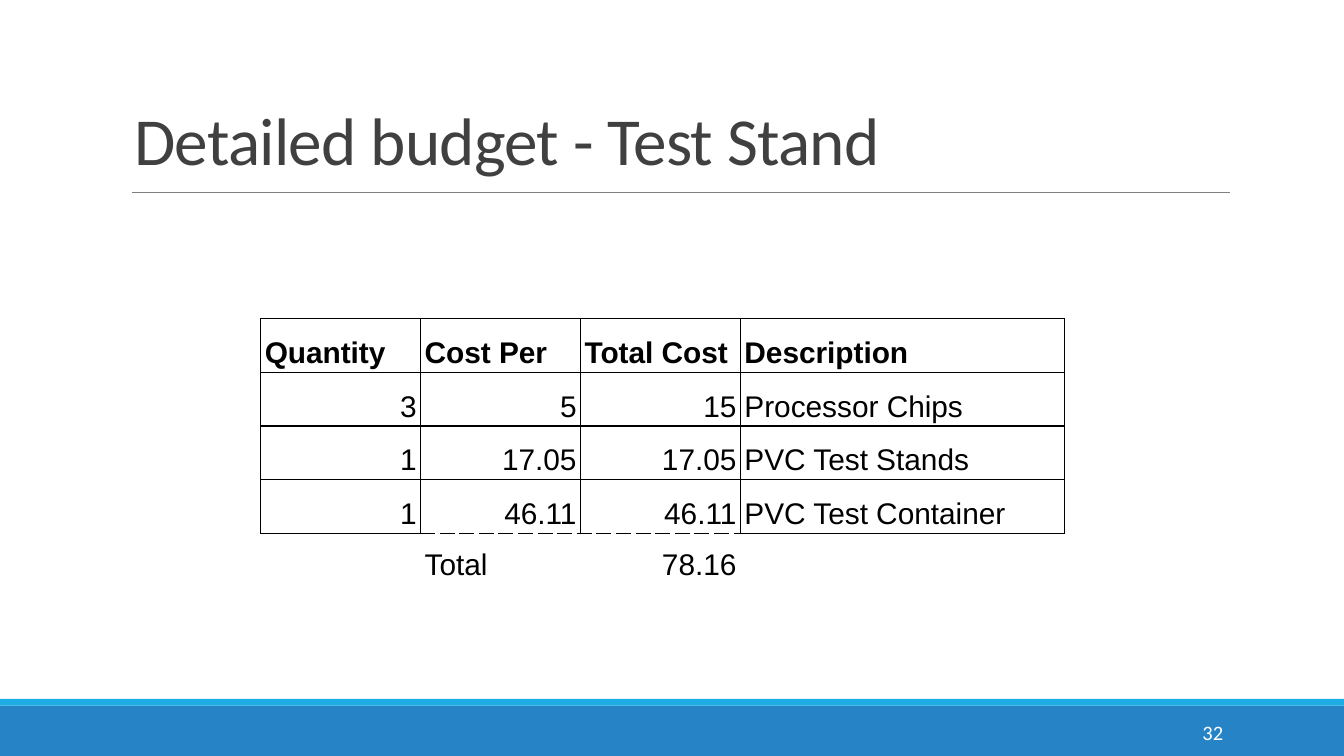
from dataclasses import dataclass

from lxml import etree
from pptx import Presentation
from pptx.dml.color import RGBColor
from pptx.enum import shapes, text
from pptx.oxml import ns
from pptx.util import Inches, Pt


@dataclass(frozen=True)
class Theme:
    blue: str = "2683C6"
    sky: str = "1CADE4"
    rule: str = "808080"
    head: str = "404040"
    ink: str = "000000"
    white: str = "FFFFFF"
    sans: str = "Calibri"
    grid: str = "Arial"
    title: int = 36
    body: int = 16
    page: int = 11


THEME = Theme()
WIDE = 10
HIGH = WIDE * 9 / 16
COLS = [1.19, 1.19, 1.19, 2.41]
ROWS = [0.4, 0.4, 0.4, 0.4, 0.38]
BUDGET = [
    ["Quantity", "Cost Per", "Total Cost", "Description"],
    ["3", "5", "15", "Processor Chips"],
    ["1", "17.05", "17.05", "PVC Test Stands"],
    ["1", "46.11", "46.11", "PVC Test Container"],
    ["", "Total", "78.16", ""],
]
SOLID = (0.75, "solid")
DASH = (1, "sysDash")


def style(para, face, size, color, bold=False):
    font = para.font
    font.name, font.size, font.bold = face, Pt(size), bold
    font.color.rgb = RGBColor.from_string(color)


def add_text(slide, box, words, face, size, color, anchor, inset=0.05):
    frame = slide.shapes.add_textbox(*map(Inches, box)).text_frame
    frame.word_wrap = True
    frame.vertical_anchor = anchor
    frame.margin_left = frame.margin_right = Inches(0.1)
    frame.margin_top = frame.margin_bottom = Inches(inset)
    para = frame.paragraphs[0]
    para.text = words
    style(para, face, size, color)
    return para


def add_bar(slide, box, color):
    bar = slide.shapes.add_shape(shapes.MSO_SHAPE.RECTANGLE, *map(Inches, box))
    bar.shadow.inherit = False
    bar.fill.solid()
    bar.fill.fore_color.rgb = RGBColor.from_string(color)
    bar.line.fill.background()


def add_title(slide, box, words):
    left, top, width, height = box
    base = top + height
    rule = slide.shapes.add_connector(
        shapes.MSO_CONNECTOR.STRAIGHT,
        *map(Inches, (left + 0.08, base, left + width, base)))
    rule.line.color.rgb = RGBColor.from_string(THEME.rule)
    rule.line.width = Pt(0.5)
    etree.SubElement(rule._element.spPr, ns.qn("a:effectLst"))
    para = add_text(slide, box, words, THEME.sans, THEME.title, THEME.head,
                    text.MSO_ANCHOR.BOTTOM, inset=0.1)
    para.line_spacing = 0.85
    para.runs[0].font._element.set("spc", "-40")


def add_footer(slide, box, number):
    left, top, width, height = box
    add_bar(slide, (left, top + 0.05, width, height - 0.05), THEME.blue)
    add_bar(slide, (left, top, width, 0.05), THEME.sky)
    para = add_text(slide, (left + 8.12, top + 0.1, 1.08, 0.3), number,
                    THEME.sans, THEME.page, THEME.white,
                    text.MSO_ANCHOR.MIDDLE)
    para.alignment = text.PP_ALIGN.RIGHT


def set_edges(cell, edges):
    """Draw the (width, dash) edges given by side; clear the other sides."""
    props = cell._tc.get_or_add_tcPr()
    for spot, side in enumerate("LRTB"):
        line = etree.Element(ns.qn(f"a:ln{side}"))
        props.insert(spot, line)
        if side not in edges:
            etree.SubElement(line, ns.qn("a:noFill"))
            continue
        width, dash = edges[side]
        line.set("w", str(Pt(width)))
        fill = etree.SubElement(line, ns.qn("a:solidFill"))
        etree.SubElement(fill, ns.qn("a:srgbClr")).set("val", THEME.ink)
        etree.SubElement(line, ns.qn("a:prstDash")).set("val", dash)


def add_budget(slide, box):
    table = slide.shapes.add_table(
        len(ROWS), len(COLS), *map(Inches, box)).table
    table.first_row = table.horz_banding = False
    for col, width in zip(table.columns, COLS):
        col.width = Inches(width)
    for row, height in zip(table.rows, ROWS):
        row.height = Inches(height)
    last = len(ROWS) - 1
    for r, row in enumerate(BUDGET):
        for c, words in enumerate(row):
            cell = table.cell(r, c)
            cell.fill.background()
            cell.vertical_anchor = text.MSO_ANCHOR.BOTTOM
            cell.margin_left = cell.margin_right = Inches(0.03)
            cell.margin_top = cell.margin_bottom = Inches(0.02)
            para = cell.text_frame.paragraphs[0]
            para.text = words
            para.line_spacing = 1.15
            style(para, THEME.grid, THEME.body, THEME.ink, bold=r == 0)
            if words.replace(".", "").isdigit():
                para.alignment = text.PP_ALIGN.RIGHT
            total = DASH if c in (1, 2) else SOLID
            if r == last:
                set_edges(cell, {"T": total})
            else:
                base = total if r == last - 1 else SOLID
                set_edges(cell, {"L": SOLID, "R": SOLID, "T": SOLID, "B": base})


def main():
    deck = Presentation()
    deck.slide_width, deck.slide_height = Inches(WIDE), Inches(HIGH)
    slide = deck.slides.add_slide(deck.slide_layouts[6])
    add_footer(slide, (0, 5.2, WIDE, HIGH - 5.2), "32")
    add_title(slide, (0.9, 0.24, 8.25, 1.19), "Detailed budget - Test Stand")
    add_budget(slide, (1.94, 2.37, sum(COLS), sum(ROWS)))
    deck.save("out.pptx")


if __name__ == "__main__":
    main()
